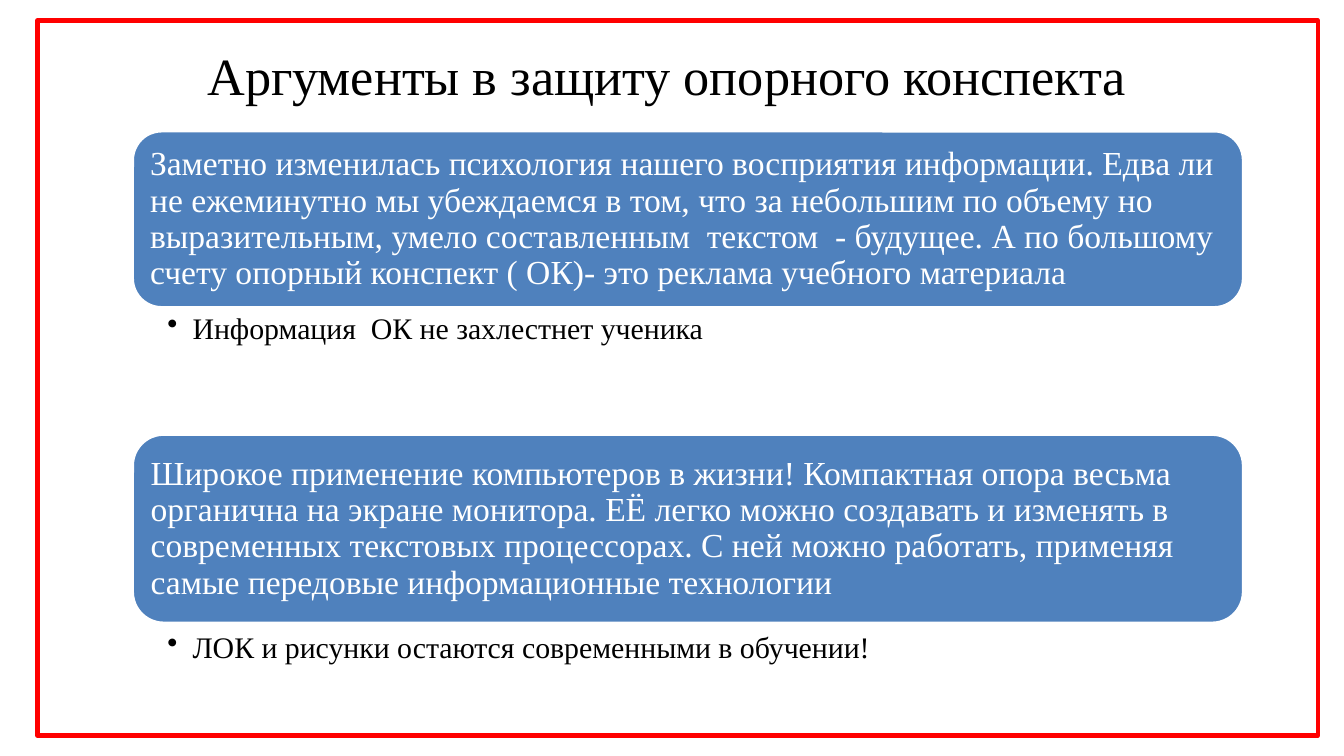
"""Build the slide with two arguments in favour of the reference outline."""
from dataclasses import dataclass

from lxml import etree
from pptx import Presentation
from pptx.dml.color import RGBColor
from pptx.enum.shapes import MSO_SHAPE as SHAPE
from pptx.enum.text import MSO_ANCHOR as ANCHOR, PP_ALIGN as ALIGN
from pptx.oxml.ns import qn
from pptx.util import Pt


@dataclass(frozen=True)
class Theme:
    font: str = "Times New Roman"
    black: RGBColor = RGBColor(0, 0, 0)
    white: RGBColor = RGBColor(255, 255, 255)
    red: RGBColor = RGBColor(255, 0, 0)
    blue: RGBColor = RGBColor(0x4F, 0x81, 0xBD)
    title: int = 28
    body: int = 18
    bullet: int = 16


T = Theme()


def write(sp, text, size, color=T.black, align=ALIGN.LEFT, anchor=ANCHOR.TOP,
          insets=(7.2, 3.6, 7.2, 3.6), spacing=1.0, bullet=False):
    tf = sp.text_frame
    tf.word_wrap = True
    tf.vertical_anchor = anchor
    tf.margin_left, tf.margin_top, tf.margin_right, tf.margin_bottom = map(Pt, insets)
    p = tf.paragraphs[0]
    p.alignment, p.line_spacing = align, spacing
    if bullet:
        pPr = p._p.get_or_add_pPr()
        pPr.set("marL", str(Pt(13.5)))
        pPr.set("indent", str(Pt(-13.5)))
        etree.SubElement(pPr, qn("a:buChar")).set("char", "•")
    r = p.add_run()
    r.text = text
    r.font.name, r.font.size, r.font.color.rgb = T.font, Pt(size), color


def add_box(kind, left, top, width, height, line, weight, fill=None):
    sp = s.shapes.add_shape(kind, Pt(left), Pt(top), Pt(width), Pt(height))
    sp.shadow.inherit = False
    if fill is None:
        sp.fill.background()
    else:
        sp.fill.solid()
        sp.fill.fore_color.rgb = fill
    sp.line.color.rgb, sp.line.width = line, Pt(weight)
    return sp


prs = Presentation()
prs.slide_width, prs.slide_height = Pt(720), Pt(405)
s = prs.slides.add_slide(prs.slide_layouts[6])

add_box(SHAPE.RECTANGLE, 20, 11, 686, 383, T.red, 2.5)
title = s.shapes.add_textbox(Pt(25.5), Pt(19.5), Pt(663), Pt(41))
write(title, "Аргументы в защиту опорного конспекта", T.title, align=ALIGN.CENTER)

LEFT, WIDTH = 70.8, 595.5
ARGUMENTS = [
    (70, 95, "Заметно изменилась психология нашего восприятия информации. Едва ли не "
     "ежеминутно мы убеждаемся в том, что за небольшим по объему но выразительным, умело "
     "составленным  текстом  - будущее. А по большому счету опорный конспект ( ОК)- это "
     "реклама учебного материала",
     166.3, "Информация  ОК не захлестнет ученика"),
    (232.5, 101.5, "Широкое применение компьютеров в жизни! Компактная опора весьма органична "
     "на экране монитора. ЕЁ легко можно создавать и изменять в современных текстовых "
     "процессорах. С ней можно работать, применяя самые передовые информационные технологии",
     337.3, "ЛОК и рисунки остаются современными в обучении!"),
]
for top, height, argument, note_top, conclusion in ARGUMENTS:
    card = add_box(SHAPE.ROUNDED_RECTANGLE, LEFT, top, WIDTH, height, T.white, 2, T.blue)
    write(card, argument, T.body, T.white, anchor=ANCHOR.MIDDLE,
          insets=(5, 5, 5, 5), spacing=0.9)
    note = s.shapes.add_textbox(Pt(LEFT), Pt(note_top), Pt(WIDTH), Pt(29))
    write(note, conclusion, T.bullet, insets=(18.9, 1.6, 8.9, 1.6), spacing=0.9, bullet=True)

prs.save("out.pptx")
